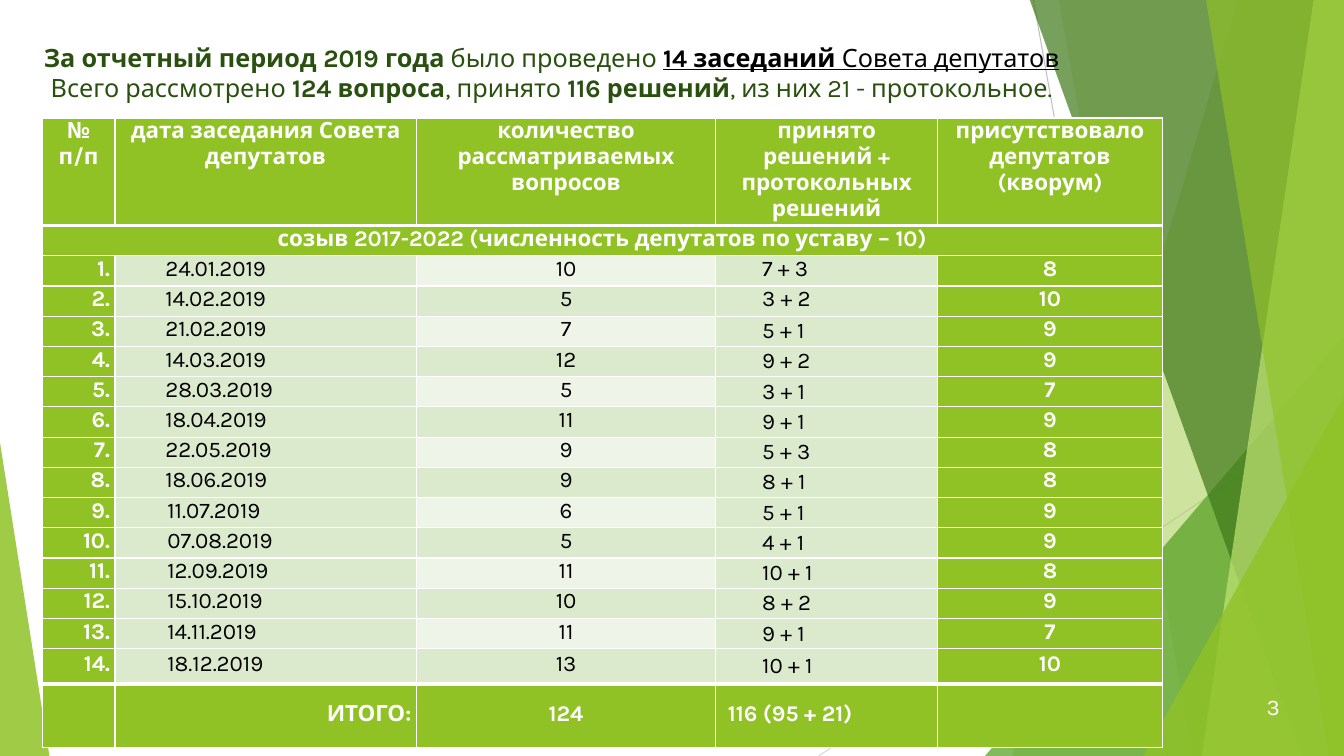
from lxml import etree
from pptx import Presentation
from pptx import util as u
from pptx.dml.color import RGBColor
from pptx.enum import shapes, text
from pptx.oxml import ns

Inches = u.Inches
LEFT, CENTER, RIGHT = text.PP_ALIGN.LEFT, text.PP_ALIGN.CENTER, text.PP_ALIGN.RIGHT
WHITE = RGBColor(0xFF, 0xFF, 0xFF)
BLACK = RGBColor(0, 0, 0)
GREEN = RGBColor(0x90, 0xC2, 0x26)
LEAF = RGBColor(0x54, 0xA0, 0x21)
FOREST = RGBColor(0x3F, 0x78, 0x19)
LIME = RGBColor(0xC0, 0xE4, 0x74)
TITLE_GREEN = RGBColor(0x2A, 0x50, 0x10)
BAND = RGBColor(0xDB, 0xE9, 0xCD)
PALE_BAND = RGBColor(0xEE, 0xF4, 0xE8)
GREY = RGBColor(0xBF, 0xBF, 0xBF)
PALE_GREY = RGBColor(0xD9, 0xD9, 0xD9)


def write(para, words, size=16, color=WHITE, bold=False, underline=False,
          align=LEFT, spacing=None, margin=0, indent=0):
    para.alignment = align
    if spacing:
        para.line_spacing = u.Pt(spacing)
    if margin:
        props = para._p.get_or_add_pPr()
        props.set("marL", str(Inches(margin)))
        props.set("indent", str(Inches(indent)))
    span = para.add_run()
    span.text = words
    span.font.name = "Karla"
    span.font.size = u.Pt(size)
    span.font.color.rgb = color
    span.font.bold = bold
    span.font.underline = underline


def tint(shape, color, opacity):
    shape.shadow.inherit = False
    shape.line.fill.background()
    shape.fill.solid()
    shape.fill.fore_color.rgb = color
    fill_color = shape._element.spPr.find(ns.qn("a:solidFill"))[0]
    etree.SubElement(fill_color, ns.qn("a:alpha")).set("val", str(opacity * 1000))


deck = Presentation()
deck.slide_width, deck.slide_height = Inches(13.33), Inches(7.5)
page = deck.slides.add_slide(deck.slide_layouts[6])

for x1, y1, x2, y2, color in [(10.25, 0, 11.58, 7.5, GREY), (13.33, 4.03, 8.12, 7.5, PALE_GREY)]:
    line = page.shapes.add_connector(shapes.MSO_CONNECTOR.STRAIGHT,
                                     Inches(x1), Inches(y1), Inches(x2), Inches(y2))
    line.line.color.rgb = color
    line.line.width = u.Pt(0.75)
    etree.SubElement(line._element.spPr, ns.qn("a:effectLst"))

facets = [
    ("band", (12.28, 10.04), GREEN, 30),
    ("band", (10.5, 11.83), GREEN, 20),
    ("triangle", (9.77, 3.33, 3.56, 4.17, 1), LEAF, 72),
    ("band", (10.21, 12.91), FOREST, 70),
    ("band", (13.03, 11.92), LIME, 70),
    ("band", (11.96, 13.18), GREEN, 65),
    ("triangle", (11.34, 3.93, 1.99, 3.57, 1), GREEN, 80),
    ("triangle", (0, 4.39, 0.49, 3.11, 0), GREEN, 85),
]
for kind, place, color, opacity in facets:
    if kind == "band":
        top_x, bottom_x = place
        corners = [(Inches(x), Inches(y)) for x, y in
                   [(top_x, -0.01), (13.33, -0.01), (13.33, 7.5), (bottom_x, 7.5)]]
        builder = page.shapes.build_freeform(*corners[0], scale=1.0)
        builder.add_line_segments(corners[1:], close=True)
        facet = builder.convert_to_shape()
    else:
        *frame, apex = place
        facet = page.shapes.add_shape(shapes.MSO_SHAPE.ISOSCELES_TRIANGLE, *map(Inches, frame))
        facet.adjustments[0] = apex
    tint(facet, color, opacity)

title = page.shapes.add_textbox(Inches(0.3), Inches(0.37), Inches(10.34), Inches(0.8))
title.text_frame.word_wrap = True
para = title.text_frame.paragraphs[0]
title_spans = [
    ("За отчетный период 2019 года", TITLE_GREEN, True, False),
    (" было проведено ", TITLE_GREEN, False, False),
    ("14 заседаний ", BLACK, True, True),
    ("Совета депутатов", BLACK, False, True),
    (None, None, None, None),
    ("Всего рассмотрено ", TITLE_GREEN, False, False),
    ("124 вопроса", TITLE_GREEN, True, False),
    (", принято ", TITLE_GREEN, False, False),
    ("116 решений", TITLE_GREEN, True, False),
    (", из них 21 - протокольное.", TITLE_GREEN, False, False),
]
for words, color, bold, underline in title_spans:
    if words is None:
        para.add_line_break()
    else:
        write(para, words, size=18, color=color, bold=bold, underline=underline, align=CENTER)

headers = ["№\nп/п", "дата заседания Совета депутатов", "количество рассматриваемых вопросов",
           "принято решений + протокольных решений", "присутствовало депутатов\n(кворум)"]
meetings = [
    ("24.01.2019", 10, "7 + 3", 8), ("14.02.2019", 5, "3 + 2", 10),
    ("21.02.2019", 7, "5 + 1", 9), ("14.03.2019", 12, "9 + 2", 9),
    ("28.03.2019", 5, "3 + 1", 7), ("18.04.2019", 11, "9 + 1", 9),
    ("22.05.2019", 9, "5 + 3", 8), ("18.06.2019", 9, "8 + 1", 8),
    ("11.07.2019", 6, "5 + 1", 9), ("07.08.2019", 5, "4 + 1", 9),
    ("12.09.2019", 11, "10 + 1", 8), ("15.10.2019", 10, "8 + 2", 9),
    ("14.11.2019", 11, "9 + 1", 7), ("18.12.2019", 13, "10 + 1", 10),
]
widths = [0.72, 2.99, 2.97, 2.2, 2.23]
heights = [0.92] + [0.3] * 14 + [0.35, 0.63]
last = len(heights) - 1
table = page.shapes.add_table(len(heights), len(widths), Inches(0.42), Inches(1.17),
                              Inches(11.11), Inches(6.08)).table
for column, width in zip(table.columns, widths):
    column.width = Inches(width)
for row, height in zip(table.rows, heights):
    row.height = Inches(height)

for r in range(len(heights)):
    for c in range(len(widths)):
        cell = table.cell(r, c)
        cell.margin_left = cell.margin_right = Inches(0.05)
        cell.margin_top = cell.margin_bottom = 0
        cell.vertical_anchor = text.MSO_ANCHOR.MIDDLE if r else text.MSO_ANCHOR.TOP
        for side in "LRTB":
            thick = (r == 0 and side == "B") or (r == 1 and side == "T") \
                or (r == last and side == "T") or (r == last - 1 and side == "B")
            edge = etree.SubElement(cell._tc.get_or_add_tcPr(), ns.qn("a:ln" + side))
            edge.set("w", str(u.Pt(3 if thick else 1)))
            paint = etree.SubElement(edge, ns.qn("a:solidFill"))
            etree.SubElement(paint, ns.qn("a:srgbClr")).set("val", str(WHITE))
        fill = GREEN
        if 1 < r < last and c in (1, 2, 3):
            fill = PALE_BAND if c == 2 and r % 2 == 0 else BAND
        cell.fill.solid()
        cell.fill.fore_color.rgb = fill

for c, header in enumerate(headers):
    frame = table.cell(0, c).text_frame
    for i, words in enumerate(header.split("\n")):
        para = frame.add_paragraph() if i else frame.paragraphs[0]
        write(para, words, bold=True, align=CENTER)

table.cell(1, 0).merge(table.cell(1, 4))
write(table.cell(1, 0).text_frame.paragraphs[0],
      "созыв 2017-2022 (численность депутатов по уставу – 10)",
      bold=True, align=CENTER, spacing=16)

for number, (date, questions, decisions, present) in enumerate(meetings, 1):
    formats = [
        (f"{number}.", dict(bold=True, align=RIGHT, spacing=16)),
        (date, dict(color=BLACK, spacing=16, margin=0.45 if number < 9 else 0.47)),
        (str(questions), dict(color=BLACK, align=CENTER, spacing=16)),
        (decisions, dict(color=BLACK, margin=0.41, spacing=16 if number < 3 else None)),
        (str(present), dict(bold=True, align=CENTER, spacing=16)),
    ]
    for c, (words, style) in enumerate(formats):
        write(table.cell(number + 1, c).text_frame.paragraphs[0], words, **style)

totals = [("ИТОГО:", dict(align=RIGHT, margin=0.45)), ("124", dict(align=CENTER)),
          ("116 (95 + 21)", dict(margin=0.45, indent=-0.38))]
for c, (words, style) in enumerate(totals, 1):
    write(table.cell(last, c).text_frame.paragraphs[0], words, bold=True, spacing=16, **style)

page_number = page.shapes.add_textbox(Inches(12.04), Inches(6.81), Inches(0.75), Inches(0.4))
page_number.text_frame.word_wrap = True
page_number.text_frame.vertical_anchor = text.MSO_ANCHOR.MIDDLE
write(page_number.text_frame.paragraphs[0], "3", align=RIGHT)

deck.save("out.pptx")
